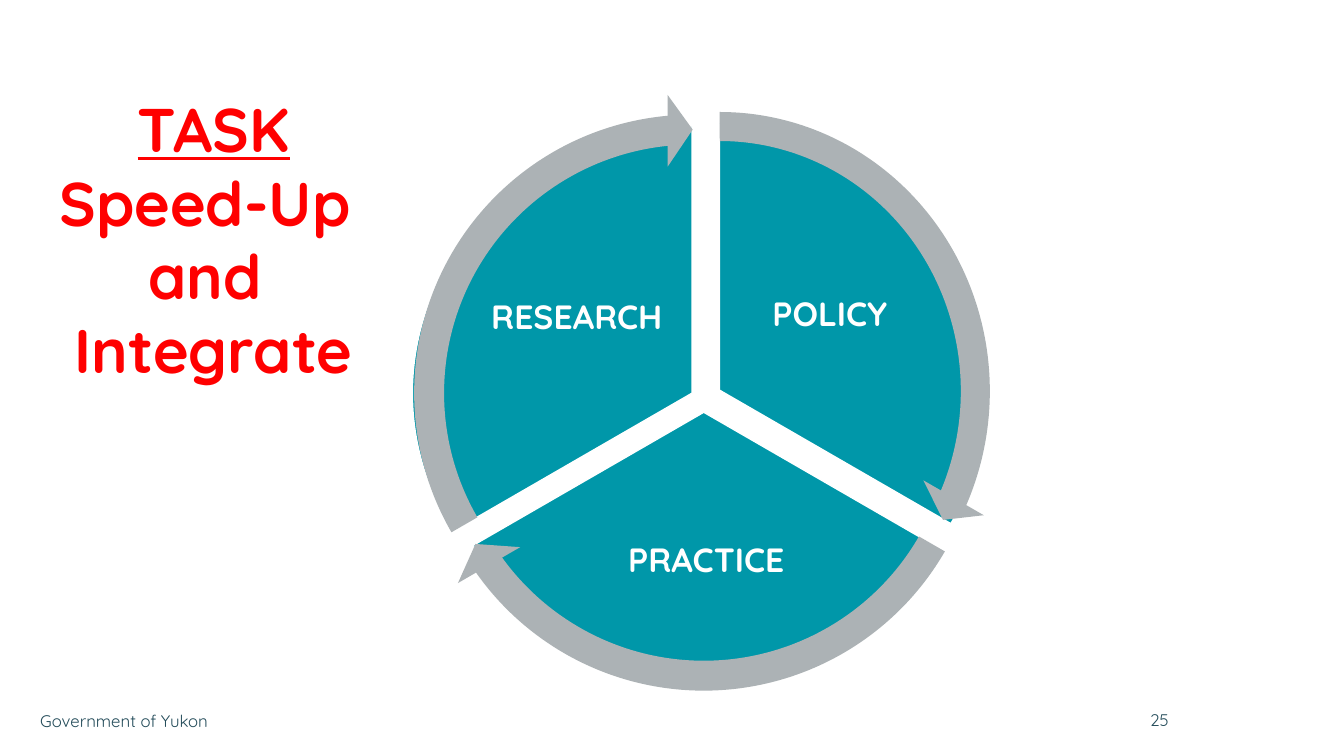
from dataclasses import dataclass

from pptx import Presentation
from pptx.dml.color import RGBColor
from pptx.enum.shapes import MSO_SHAPE
from pptx.enum.text import MSO_ANCHOR, MSO_AUTO_SIZE, PP_ALIGN
from pptx.util import Emu, Pt

PIE, ARROW = MSO_SHAPE.PIE, MSO_SHAPE.CIRCULAR_ARROW
LEFT, CENTER, RIGHT = PP_ALIGN.LEFT, PP_ALIGN.CENTER, PP_ALIGN.RIGHT
TOP, MIDDLE = MSO_ANCHOR.TOP, MSO_ANCHOR.MIDDLE
GROW = MSO_AUTO_SIZE.SHAPE_TO_FIT_TEXT
EMU_PER_PX = 9144


@dataclass(frozen=True)
class Theme:
    font: str = "Quicksand"
    teal: RGBColor = RGBColor(0x00, 0x97, 0xA9)
    grey: RGBColor = RGBColor(0xAC, 0xB2, 0xB5)
    white: RGBColor = RGBColor(0xFF, 0xFF, 0xFF)
    red: RGBColor = RGBColor(0xFF, 0x00, 0x00)
    slate: RGBColor = RGBColor(0x24, 0x4C, 0x5A)
    task_size: int = 44
    label_size: int = 24
    footer_size: int = 12


THEME = Theme()

SECTORS = [
    ("POLICY", (448, 123, 531, 528), (162, 18), (728, 235, 190, 157)),
    ("PRACTICE", (434, 145, 528, 528), (18, 90), (559, 488, 283, 138)),
    ("RESEARCH", (409, 126, 555, 528), (90, 162), (473, 238, 198, 157)),
]
ARROWS = [
    ((426, 91, 576, 594), 14.73, 161.99),
    ((401, 112, 594, 594), 86.72, 18),
    ((390, 93, 594, 594), 158.73, 90),
]
ARROW_THICKNESS, ARROW_HEAD_ANGLE, ARROW_HEAD_WIDTH = 0.05, 3.28, 0.06


def px(length):
    return Emu(length * EMU_PER_PX)


def add_text(shapes, box, lines, size, color, bold=False, align=CENTER, anchor=MIDDLE):
    text_box = shapes.add_textbox(*map(px, box))
    frame = text_box.text_frame
    frame.word_wrap = True
    frame.vertical_anchor = anchor
    frame.text = "\n".join(lines)
    for paragraph in frame.paragraphs:
        paragraph.alignment = align
        font = paragraph.font
        font.name, font.size, font.bold = THEME.font, Pt(size), bold
        font.color.rgb = color
    return frame


def add_arc_shape(shapes, preset, box, adjustments, color):
    shape = shapes.add_shape(preset, *map(px, box))
    shape.shadow.inherit = False
    shape.fill.solid()
    shape.fill.fore_color.rgb = color
    for index, value in enumerate(adjustments):
        shape.adjustments[index] = value
    return shape


def add_sector(shapes, label, box, angles, label_box):
    sector = add_arc_shape(shapes, PIE, box, angles, THEME.teal)
    sector.line.color.rgb = THEME.white
    sector.line.width = Pt(1)
    frame = add_text(shapes, label_box, [label], THEME.label_size, THEME.white, bold=True)
    frame.margin_left = frame.margin_right = frame.margin_top = frame.margin_bottom = px(3)
    frame.paragraphs[0].line_spacing = 0.9


def add_cycle_arrow(shapes, box, end_angle, start_angle):
    adjustments = (ARROW_THICKNESS, ARROW_HEAD_ANGLE, end_angle, start_angle, ARROW_HEAD_WIDTH)
    arrow = add_arc_shape(shapes, ARROW, box, adjustments, THEME.grey)
    arrow.line.fill.background()


def add_cycle(slide):
    cycle = slide.shapes.add_group_shape()
    for sector in SECTORS:
        add_sector(cycle.shapes, *sector)
    for arrow in ARROWS:
        add_cycle_arrow(cycle.shapes, *arrow)


def add_task(slide):
    lines = ["TASK", "Speed-Up ", "and ", "Integrate"]
    frame = add_text(slide.shapes, (0, 85, 424, 306), lines, THEME.task_size, THEME.red,
                     bold=True, anchor=TOP)
    frame.auto_size = GROW
    frame.paragraphs[0].font.underline = True


def add_footer(slide):
    for text, box, align in [
        ("Government of Yukon", (30, 695, 300, 40), LEFT),
        ("25", (978, 694, 191, 40), RIGHT),
    ]:
        add_text(slide.shapes, box, [text], THEME.footer_size, THEME.slate, align=align)


def main():
    presentation = Presentation()
    presentation.slide_width, presentation.slide_height = px(1333), px(750)
    slide = presentation.slides.add_slide(presentation.slide_layouts[6])
    add_footer(slide)
    add_cycle(slide)
    add_task(slide)
    presentation.save("out.pptx")


if __name__ == "__main__":
    main()
